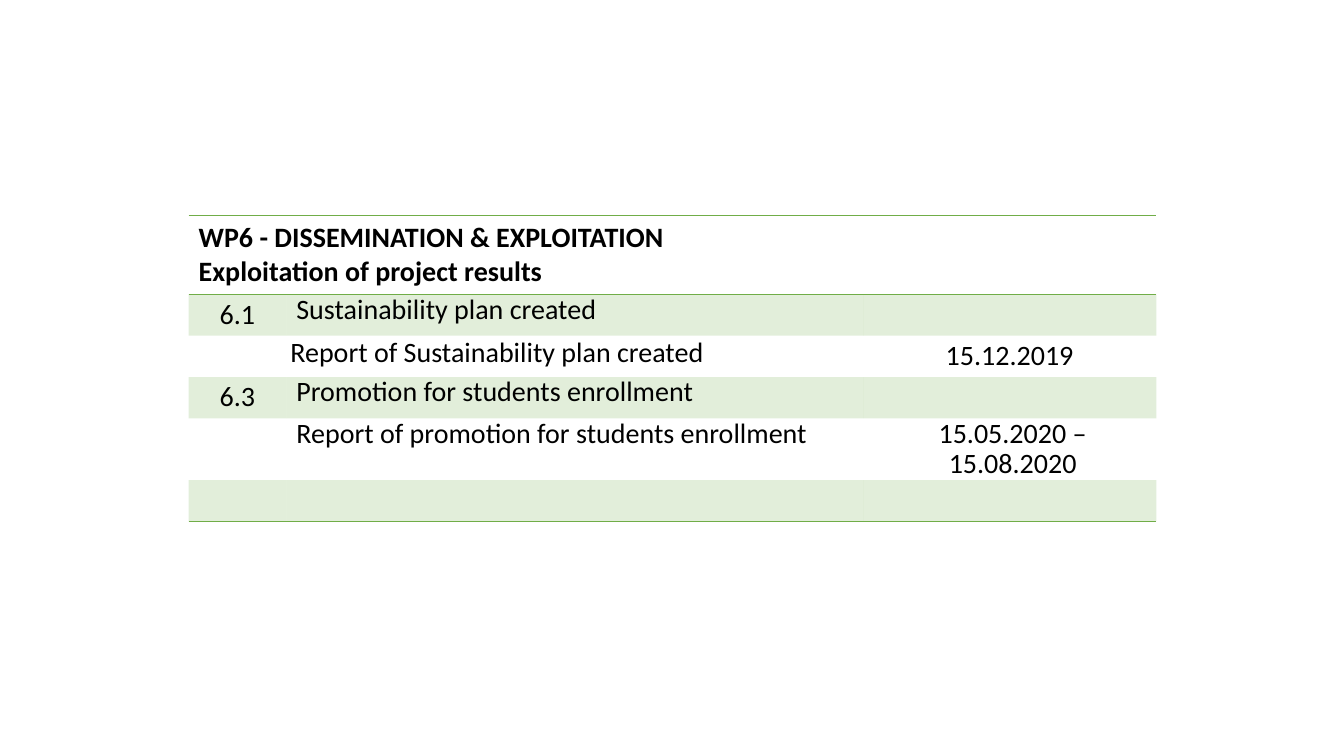
"""Build the WP6 dissemination and exploitation table slide."""
from lxml.etree import SubElement
from pptx import Presentation
from pptx.dml.color import RGBColor
from pptx.enum.text import MSO_ANCHOR as ANCHOR, PP_ALIGN as ALIGN
from pptx.oxml.ns import qn
from pptx.util import Inches, Pt

HEADING = "WP6 - DISSEMINATION & EXPLOITATION\nExploitation of project results"
ROWS = [
    ("6.1", "Sustainability plan created", ""),
    ("", "Report of Sustainability plan created", "15.12.2019"),
    ("6.3", "Promotion for students enrollment", ""),
    ("", "Report of promotion for students enrollment", "15.05.2020 – 15.08.2020"),
    ("", "", ""),
]
UNINDENTED = "Report of Sustainability plan created"
COL_WIDTHS = (0.97, 5.72, 2.91)
ROW_HEIGHT = 0.41
GREEN, BLACK = "70AD47", "000000"
NO_STYLE = "{2D5ABB26-0587-4C30-8999-92F81FD0307C}"


def rgb(value):
    return RGBColor.from_string(value)


def border(cell, side):
    ln = SubElement(cell._tc.get_or_add_tcPr(), qn("a:ln" + side), w=str(Pt(1)))
    SubElement(SubElement(ln, qn("a:solidFill")), qn("a:srgbClr"), val=GREEN)


def tint(cell):
    cell.fill.solid()
    cell.fill.fore_color.rgb = rgb(GREEN)
    color = cell._tc.tcPr.find(qn("a:solidFill")).find(qn("a:srgbClr"))
    SubElement(color, qn("a:alpha"), val="20000")


def write(cell, text, bold=False):
    p = cell.text_frame.paragraphs[0]
    p.text = text
    p.font.name, p.font.size, p.font.bold = "Calibri", Pt(20), bold
    p.font.color.rgb = rgb(BLACK)
    return p


def write_body(cell, text, col):
    p = write(cell, text)
    cell.margin_left = cell.margin_right = Inches(0.04)
    cell.margin_top = cell.margin_bottom = 0
    date_range = "–" in text
    if col != 1:
        p.alignment = ALIGN.CENTER
        cell.vertical_anchor = ANCHOR.TOP if date_range else ANCHOR.MIDDLE
    if text != UNINDENTED:
        p.line_spacing = 0.9
        if col == 1 or date_range:
            p._p.get_or_add_pPr().set("marL", str(Inches(0.06)))


def main():
    prs = Presentation()
    prs.slide_width, prs.slide_height = Inches(13.33), Inches(7.5)
    s = prs.slides.add_slide(prs.slide_layouts[6])
    n_rows = len(ROWS) + 1
    frame = s.shapes.add_table(n_rows, len(COL_WIDTHS), Inches(1.87), Inches(2.14),
                               Inches(sum(COL_WIDTHS)), Inches(n_rows * ROW_HEIGHT))
    table = frame.table
    table.first_row = table.horz_banding = False
    table._tbl.tblPr.find(qn("a:tableStyleId")).text = NO_STYLE
    for column, width in zip(table.columns, COL_WIDTHS):
        column.width = Inches(width)
    for row in table.rows:
        row.height = Inches(ROW_HEIGHT)

    table.cell(0, 0).merge(table.cell(0, len(COL_WIDTHS) - 1))
    write(table.cell(0, 0), HEADING, bold=True)
    for col in range(len(COL_WIDTHS)):
        for side in "TB":
            border(table.cell(0, col), side)
        border(table.cell(n_rows - 1, col), "B")

    for i, texts in enumerate(ROWS, 1):
        for col, text in enumerate(texts):
            cell = table.cell(i, col)
            if text:
                write_body(cell, text, col)
            if i % 2:
                tint(cell)
    prs.save("out.pptx")


if __name__ == "__main__":
    main()
